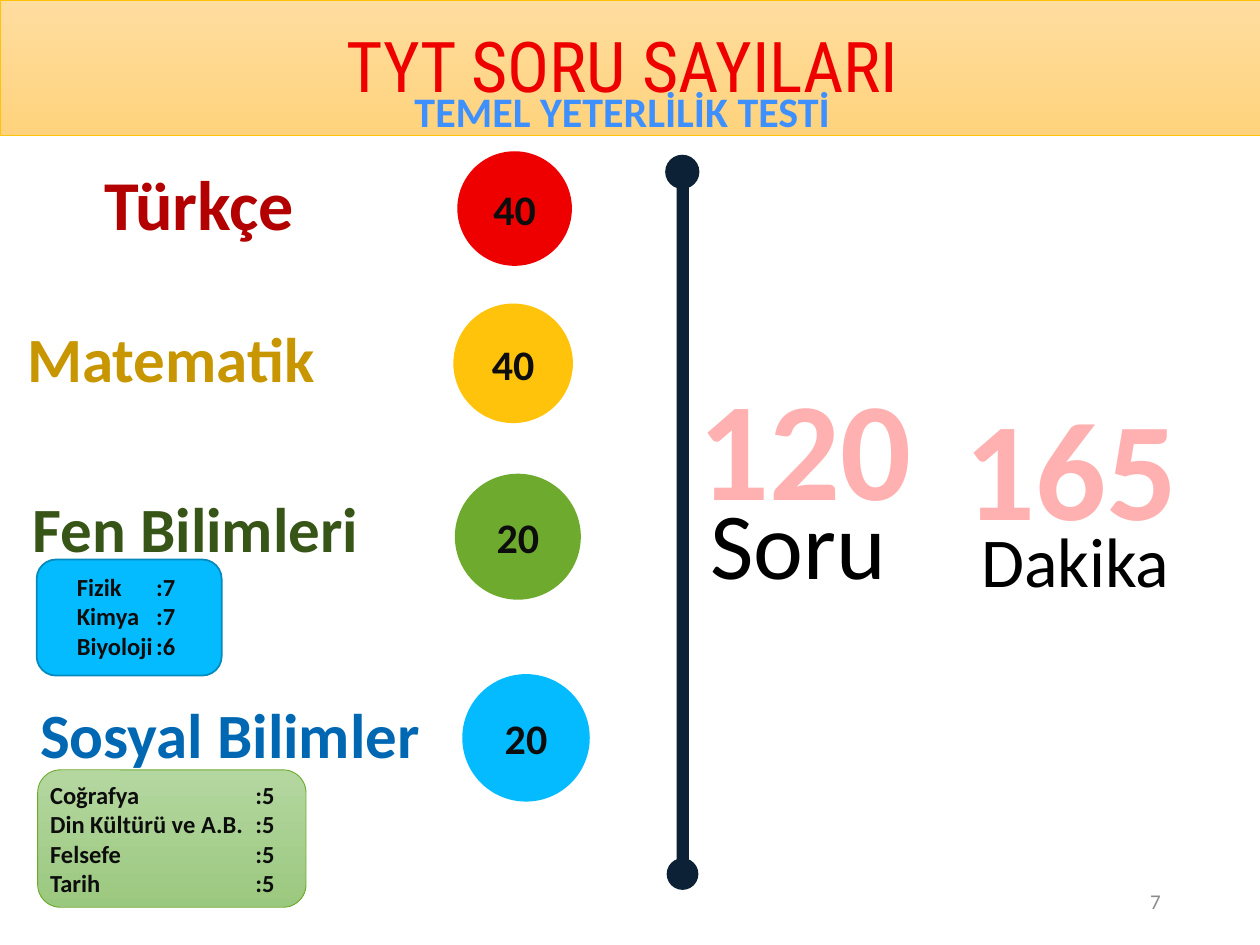
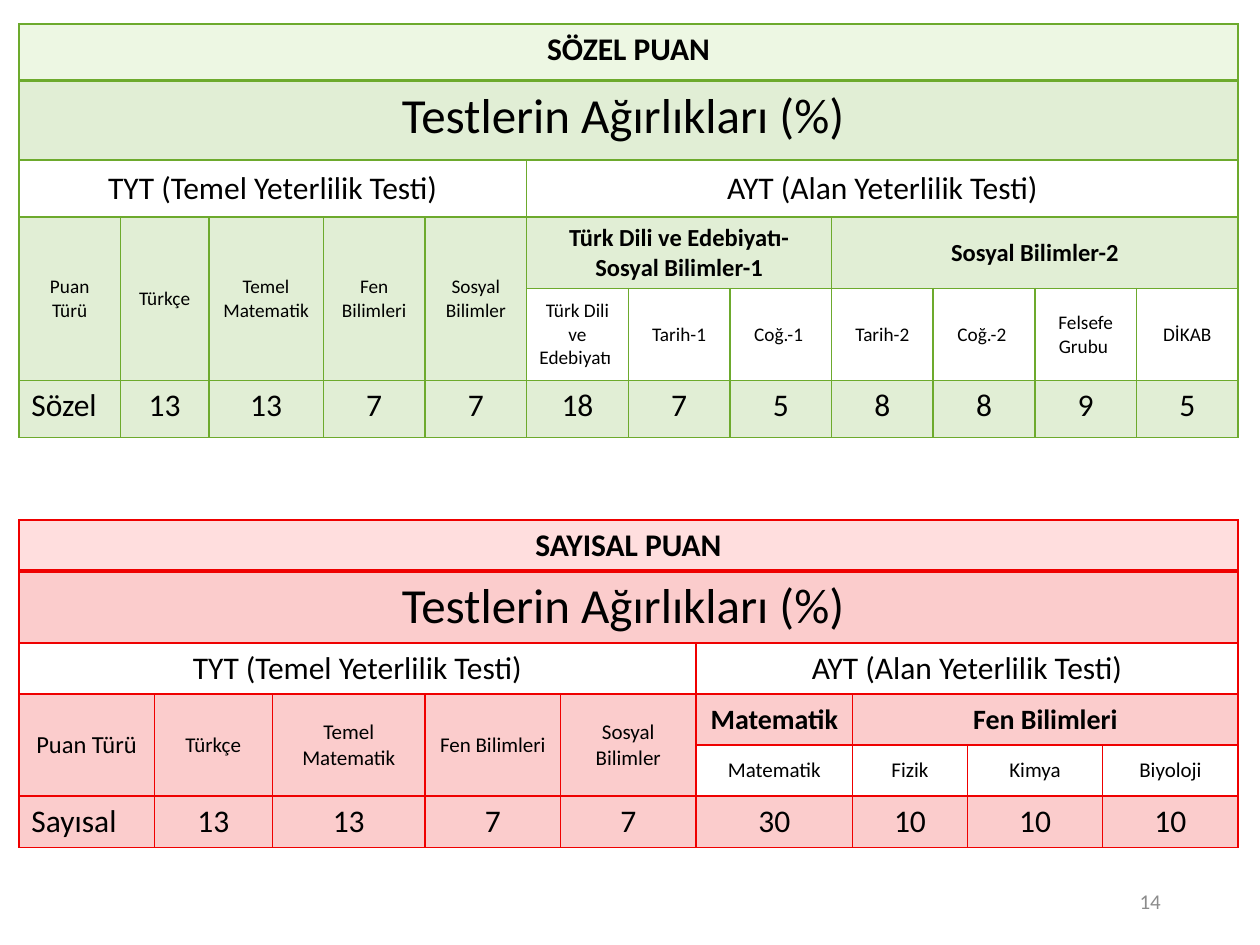
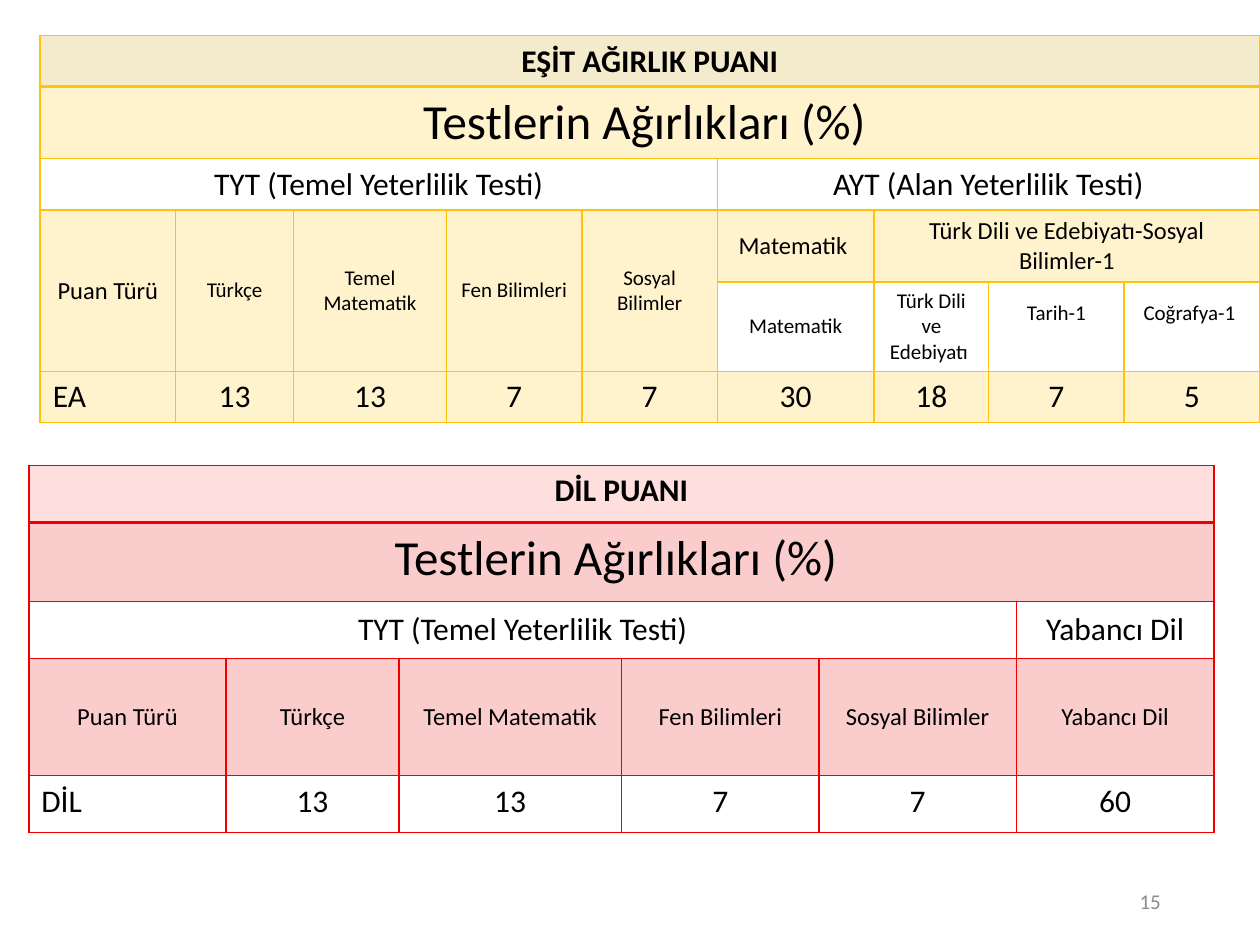
from lxml.etree import SubElement
from pptx import Presentation
from pptx.dml.color import RGBColor
from pptx.enum.shapes import MSO_SHAPE as Shape
from pptx.enum.text import MSO_ANCHOR as Anchor, PP_ALIGN as Align
from pptx.oxml.ns import qn
from pptx.util import Cm, Pt

FONT = "Calibri"
TITLE_FONT = "Roboto Condensed"
BLACK, INK, NAVY, GREY = "000000", "0D0D0D", "0C2036", "8C8C8C"
RED, GOLD, GREEN, BLUE, PINK = "EF0000", "FFC30B", "6DAA2D", "05BBFF", "FFB1B1"

# Name, its box, size and colour; then the circle's left, top, diameter, fill and count
SUBJECTS = [
    ("Türkçe", (1.85, 3.12, 5.05, 1.96), 40, "B30000", (9.22, 3.05, 2.31), RED, "40"),
    ("Matematik", (0.3, 6.32, 6.58, 1.8), 36, "C89600", (9.14, 6.12, 2.41), GOLD, "40"),
    ("Fen Bilimleri", (0.41, 9.75, 8.23, 1.8), 36, "375517", (9.17, 9.55, 2.54), GREEN, "20"),
    ("Sosyal Bilimler", (0.56, 13.89, 8.79, 1.8), 36, "0068B3", (9.32, 13.59, 2.57), BLUE, "20"),
]
# Panel box, fills, line, line width, text box, tab position, lines
DETAILS = [
    ((0.74, 11.28, 3.73, 2.34), [BLUE], "048ABD", 1, (1.3, 11.4, 3.18, 2.06), 1.6,
     [("Fizik", 7), ("Kimya", 7), ("Biyoloji", 6)]),
    ((0.76, 15.52, 5.41, 2.77), ["B4D7A0", "9BC87F"], GREEN, 0.5, (0.76, 15.6, 7.24, 2.64), 4.14,
     [("Coğrafya", 5), ("Din Kültürü ve A.B.", 5), ("Felsefe", 5), ("Tarih", 5)]),
]
TOTALS = [
    ("120", (13.84, 7.14, 6.2, 3.68), 80, PINK, True),
    ("Soru", (14.07, 9.65, 4.27, 2.57), 54, BLACK, False),
    ("165", (19.2, 7.54, 6.2, 3.73), 80, PINK, True),
    ("Dakika", (19.53, 10.31, 4.98, 2.01), 40, BLACK, False),
]
BAR = (13.64, 3.73, 0.25, 13.82)
BAR_ENDS = [(13.41, 3.12, 0.69), (13.44, 17.3, 0.64)]

WEIGHTS_HEADING = "Testlerin Ağırlıkları (%) "
TYT = "TYT (Temel Yeterlilik Testi)"
AYT = "AYT (Alan Yeterlilik Testi)"
TESTS = ["Puan Türü", "Türkçe", "Temel Matematik", "Fen Bilimleri", "Sosyal Bilimler"]
NINE_COLUMNS = [2.73, 2.38, 3.08, 2.73, 2.73, 3.16, 2.31, 2.73, 2.73]

# "sizes" holds the point sizes of the first head, the other heads, the groups and the parts
SOZEL = dict(
    title="SÖZEL PUAN", at=(0.38, 0.48), line=GREEN, header="A8DA73", area=AYT,
    columns=[2.05, 1.78, 2.31] + [2.05] * 9, rows=[1.15, 1.6, 1.15, 1.44, 1.85, 1.15],
    sizes=(11, 11, 14, 11), bold_groups=True, tint_weights=True,
    groups=[("Türk Dili ve Edebiyatı- Sosyal Bilimler-1",
             ["Türk Dili ve Edebiyatı ", "Tarih-1", "Coğ.-1 "]),
            ("Sosyal Bilimler-2", ["Tarih-2", "Coğ.-2 ", "Felsefe Grubu ", "DİKAB"])],
    weights=["Sözel", 13, 13, 7, 7, 18, 7, 5, 8, 8, 9, 5])
SAYISAL = dict(
    title="SAYISAL PUAN", at=(0.38, 10.48), line=RED, header="FF5C5C", area=AYT,
    columns=NINE_COLUMNS, rows=[1.03, 1.45, 1.03, 1.03, 1.03, 1.03],
    sizes=(14, 12, 16, 12), bold_groups=True, tint_weights=True,
    groups=[("Matematik ", ["Matematik"]),
            ("Fen Bilimleri", ["Fizik", "Kimya", "Biyoloji"])],
    weights=["Sayısal", 13, 13, 7, 7, 30, 10, 10, 10])
DIL = dict(
    title="DİL PUANI", at=(0.58, 9.38), line=RED, header="FF5C5C", area="Yabancı Dil",
    columns=[3.98, 3.48, 4.49, 3.98, 3.98, 3.98], rows=[1.15, 1.6, 1.15, 2.36, 1.15],
    sizes=(14, 14, 14, 14), bold_groups=False, tint_weights=False,
    groups=[("Yabancı Dil", [])],
    weights=["DİL", 13, 13, 7, 7, 60])
ESIT = dict(
    title="EŞİT AĞIRLIK PUANI", at=(0.81, 0.72), line=GOLD, header="C89600", area=AYT,
    columns=NINE_COLUMNS, rows=[1.03, 1.45, 1.03, 1.45, 1.81, 1.03],
    sizes=(14, 12, 14, 12), bold_groups=False, tint_weights=True,
    groups=[("Matematik ", ["Matematik"]),
            ("Türk Dili ve Edebiyatı-Sosyal Bilimler-1",
             ["Türk Dili ve Edebiyatı ", "Tarih-1", "Coğrafya-1 "])],
    weights=["EA", 13, 13, 7, 7, 30, 18, 7, 5],
    raised=["Tarih-1", "Coğrafya-1 "])


def rgb(colour):
    return RGBColor.from_string(colour)


def lengths(values):
    return [Cm(value) for value in values]


def paint(shape, fills, line=None, width=0.5):
    """Fill with one colour, or with two shading from top to bottom."""
    if len(fills) == 1:
        shape.fill.solid()
        shape.fill.fore_color.rgb = rgb(fills[0])
    else:
        shape.fill.gradient()
        shape.fill.gradient_angle = 270
        for stop, colour in zip(shape.fill.gradient_stops, fills):
            stop.color.rgb = rgb(colour)
    if line:
        shape.line.color.rgb = rgb(line)
        shape.line.width = Pt(width)
    else:
        shape.line.fill.background()


def write(frame, text, size, colour, bold=False, align=Align.LEFT, font=FONT):
    frame.word_wrap = True
    frame.text = text
    for para in frame.paragraphs:
        para.alignment = align
        para.font.name = font
        para.font.size = Pt(size)
        para.font.bold = bold
        para.font.color.rgb = rgb(colour)


def add_shape(slide, kind, at, fills, line=None, width=0.5):
    shape = slide.shapes.add_shape(kind, *lengths(at))
    shape.shadow.inherit = False
    paint(shape, fills, line, width)
    return shape


def add_circle(slide, left, top, diameter, fill):
    return add_shape(slide, Shape.OVAL, (left, top, diameter, diameter), [fill])


def add_text(slide, at, *style, **options):
    frame = slide.shapes.add_textbox(*lengths(at)).text_frame
    write(frame, *style, **options)
    return frame


def add_page_number(slide, number):
    frame = add_text(slide, (17.93, 17.65, 5.72, 1.02), str(number), 12, GREY, align=Align.RIGHT)
    frame.vertical_anchor = Anchor.MIDDLE


def set_tab(para, position):
    tabs = SubElement(para._p.get_or_add_pPr(), qn("a:tabLst"))
    SubElement(tabs, qn("a:tab"), pos=str(Cm(position)), algn="l")
    # The tab list comes before the default run properties
    tabs.getparent().insert(0, tabs)


def set_borders(cell, colour, top=1, bottom=1):
    properties = cell._tc.get_or_add_tcPr()
    for side, width in (("L", 1), ("R", 1), ("T", top), ("B", bottom)):
        line = SubElement(properties, qn(f"a:ln{side}"), w=str(Pt(width)))
        fill = SubElement(line, qn("a:solidFill"))
        SubElement(fill, qn("a:srgbClr"), val=colour)


def fill_cell(cell, colour, opacity=100):
    cell.fill.solid()
    cell.fill.fore_color.rgb = rgb(colour)
    if opacity < 100:
        value = cell._tc.tcPr.find(qn("a:solidFill")).find(qn("a:srgbClr"))
        SubElement(value, qn("a:alpha"), val=str(opacity * 1000))


def add_score_table(slide, score):
    rows, columns, line = score["rows"], score["columns"], score["line"]
    first_size, test_size, group_size, part_size = score["sizes"]
    box = (*score["at"], sum(columns), sum(rows))
    table = slide.shapes.add_table(len(rows), len(columns), *lengths(box)).table
    table.first_row = table.horz_banding = False
    for column, width in zip(table.columns, columns):
        column.width = Cm(width)
    for row, height in zip(table.rows, rows):
        row.height = Cm(height)
    for index, row in enumerate(table.rows):
        for cell in row.cells:
            set_borders(cell, line, top=2 if index == 1 else 1, bottom=2 if index == 0 else 1)

    def put(row, column, text, size, bold=False, tinted=True, height=1, width=1,
            anchor=Anchor.MIDDLE, align=Align.CENTER):
        cell = table.cell(row, column)
        if height * width > 1:
            cell.merge(table.cell(row + height - 1, column + width - 1))
        write(cell.text_frame, text, size, BLACK, bold, align)
        cell.vertical_anchor = anchor
        if tinted:
            fill_cell(cell, line, 20)
        else:
            cell.fill.background()
        return cell

    total, tests = len(columns), len(TESTS)
    header = put(0, 0, score["title"], 18, bold=True, width=total, anchor=Anchor.TOP)
    fill_cell(header, score["header"])
    put(1, 0, WEIGHTS_HEADING, 28, width=total, anchor=Anchor.TOP)
    put(2, 0, TYT, 18, tinted=False, width=tests)
    put(2, tests, score["area"], 18, tinted=False, width=total - tests)

    for column, test in enumerate(TESTS):
        put(3, column, test, test_size if column else first_size, height=len(rows) - 4)
    column = tests
    for group, parts in score["groups"]:
        width = max(1, len(parts))
        put(3, column, group, group_size, score["bold_groups"], width=width)
        for offset, part in enumerate(parts):
            cell = put(4, column + offset, part, part_size, tinted=False)
            if part in score.get("raised", []):
                cell.margin_bottom = Cm(0.65)
        column += width
    for column, weight in enumerate(score["weights"]):
        put(len(rows) - 1, column, str(weight), 18, tinted=score["tint_weights"],
            anchor=Anchor.TOP, align=Align.CENTER if column else Align.LEFT)


def add_question_counts(deck):
    slide = deck.slides.add_slide(deck.slide_layouts[5])
    title = slide.shapes.title
    title.left, title.top, title.width, title.height = lengths((0, 0, 25.4, 2.74))
    paint(title, ["FFDD9F", "FFD37D"], GOLD)
    frame = title.text_frame
    write(frame, "TYT SORU SAYILARI", 40, RED, align=Align.CENTER, font=TITLE_FONT)
    frame.vertical_anchor = Anchor.TOP
    frame.margin_left, frame.margin_right, frame.margin_top = lengths((0, 0.3, 0.46))
    add_text(slide, (1.14, 1.6, 22.81, 1.27), "TEMEL YETERLİLİK TESTİ", 24, "3F90FF",
             bold=True, align=Align.CENTER)

    add_shape(slide, Shape.RECTANGLE, BAR, [NAVY])
    for end in BAR_ENDS:
        add_circle(slide, *end, NAVY)

    for panel, fills, line, width, at, tab, counts in DETAILS:
        add_shape(slide, Shape.ROUNDED_RECTANGLE, panel, fills, line, width)
        text = "\n".join(f"{name}\t:{count}" for name, count in counts)
        for para in add_text(slide, at, text, 14, INK, bold=True).paragraphs:
            set_tab(para, tab)

    for name, at, size, colour, circle, fill, count in SUBJECTS:
        add_text(slide, at, name, size, colour, bold=True)
        frame = add_circle(slide, *circle, fill).text_frame
        write(frame, count, 24, INK, bold=True, align=Align.CENTER)
        frame.vertical_anchor = Anchor.MIDDLE

    for text, at, size, colour, bold in TOTALS:
        add_text(slide, at, text, size, colour, bold)
    add_page_number(slide, 7)


def add_scores(deck, scores, number):
    slide = deck.slides.add_slide(deck.slide_layouts[6])
    for score in scores:
        add_score_table(slide, score)
    add_page_number(slide, number)


def main():
    deck = Presentation()
    deck.slide_width, deck.slide_height = Cm(25.4), Cm(19.05)
    add_question_counts(deck)
    add_scores(deck, [SOZEL, SAYISAL], 14)
    add_scores(deck, [DIL, ESIT], 15)
    deck.save("out.pptx")


if __name__ == "__main__":
    main()
